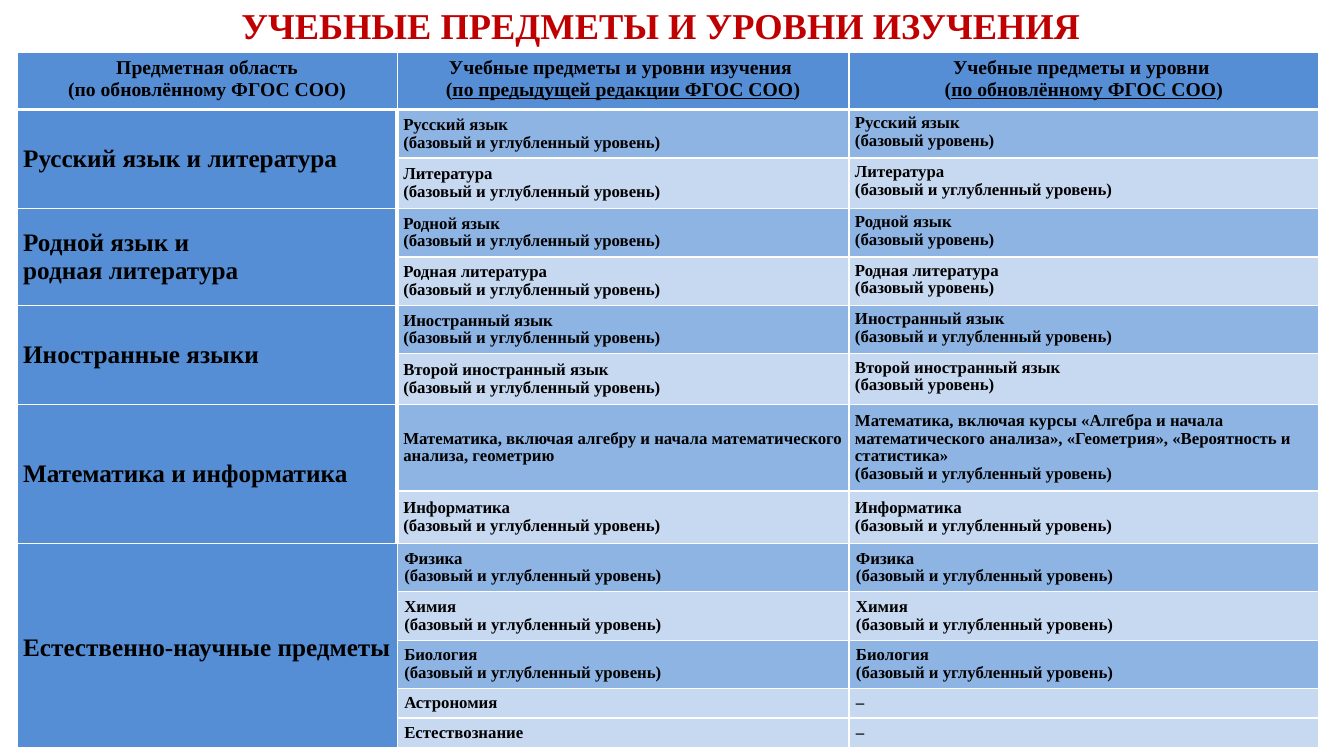
"""Build a slide with a table of school subjects and their study levels."""
from dataclasses import dataclass

from lxml import etree
from pptx import Presentation
from pptx import util as u
from pptx.dml import color
from pptx.enum import text
from pptx.oxml import ns

FONT = "Times New Roman"
BLACK, WHITE, RED = "000000", "FFFFFF", "C00000"
STRONG, MEDIUM, LIGHT = "558ED5", "8EB4E3", "C6D9F1"
THIN, THICK = 1, 3
TOP, MIDDLE = text.MSO_ANCHOR.TOP, text.MSO_ANCHOR.MIDDLE
LEFT, CENTER = text.PP_ALIGN.LEFT, text.PP_ALIGN.CENTER

BASIC = "\n(базовый уровень)"
BOTH = "\n(базовый и углубленный уровень)"
ABSENT = "–"


@dataclass
class Subject:
    previous: str
    updated: str
    height: float = 0.45


@dataclass
class Area:
    name: str
    subjects: list[Subject]
    updated_anchor: text.MSO_ANCHOR = MIDDLE
    inset: float = 0.06
    divider: float = THICK
    spacing: float = 1.0


@dataclass
class CellLook:
    fill: str
    size: float
    anchor: text.MSO_ANCHOR = MIDDLE
    align: text.PP_ALIGN = LEFT
    spacing: float = 0.95
    inset: float = 0.06
    left: float = THIN
    right: float = THIN
    top: float = THIN
    bottom: float = THIN


def same_level(name: str, height: float = 0.45) -> Subject:
    return Subject(name + BOTH, name + BOTH, height)


def lowered_level(name: str, height: float = 0.45) -> Subject:
    return Subject(name + BOTH, name + BASIC, height)


HEADER_HEIGHT = 0.54
COLUMN_WIDTHS = [3.77, 4.48, 4.66]
HEADINGS = [
    ("Предметная область", "по обновлённому ФГОС СОО", False),
    ("Учебные предметы и уровни изучения ", "по предыдущей редакции ФГОС СОО", True),
    ("Учебные предметы и уровни ", "по обновлённому ФГОС СОО", True),
]
AREAS = [
    Area("Русский язык и литература",
         [lowered_level("Русский язык"), same_level("Литература", 0.5)], TOP),
    Area("Родной язык и\nродная литература",
         [lowered_level("Родной язык"), lowered_level("Родная литература")], TOP),
    Area("Иностранные языки",
         [same_level("Иностранный язык"),
          lowered_level("Второй иностранный язык", 0.5)], TOP),
    Area("Математика и информатика",
         [Subject("Математика, включая алгебру и начала математического анализа, геометрию",
                  "Математика, включая курсы «Алгебра и начала математического анализа», "
                  "«Геометрия», «Вероятность и статистика»" + BOTH, 0.8),
          same_level("Информатика", 0.52)]),
    Area("Естественно-научные предметы",
         [same_level("Физика"), same_level("Химия"), same_level("Биология"),
          Subject("Астрономия", ABSENT, 0.28), Subject("Естествознание", ABSENT, 0.28)],
         inset=0.07, divider=THIN, spacing=1.15),
]


def rgb(value: str) -> color.RGBColor:
    return color.RGBColor.from_string(value)


def format_text(frame, size: float, ink: str, align: text.PP_ALIGN, spacing: float) -> None:
    for paragraph in frame.paragraphs:
        paragraph.alignment = align
        paragraph.line_spacing = spacing
        for run in paragraph.runs:
            run.font.name = FONT
            run.font.size = u.Pt(size)
            run.font.bold = True
            run.font.color.rgb = rgb(ink)


def add_border(cell, side: str, width: float) -> None:
    line = etree.SubElement(cell._tc.get_or_add_tcPr(), ns.qn("a:ln" + side),
                            w=str(u.Pt(width)))
    fill = etree.SubElement(line, ns.qn("a:solidFill"))
    etree.SubElement(fill, ns.qn("a:srgbClr"), val=WHITE)


def style_cell(cell, look: CellLook) -> None:
    for side, width in zip("LRTB", (look.left, look.right, look.top, look.bottom)):
        add_border(cell, side, width)
    cell.fill.solid()
    cell.fill.fore_color.rgb = rgb(look.fill)
    cell.margin_left = cell.margin_right = u.Inches(look.inset)
    cell.margin_top = cell.margin_bottom = u.Inches(0.05)
    cell.vertical_anchor = look.anchor
    format_text(cell.text_frame, look.size, BLACK, look.align, look.spacing)


def fill_header(table) -> None:
    for column, (heading, edition, underlined) in enumerate(HEADINGS):
        cell = table.cell(0, column)
        cell.text_frame.text = heading
        note = cell.text_frame.add_paragraph()
        for part in ("(", edition, ")"):
            run = note.add_run()
            run.text = part
            run.font.underline = underlined and part == edition
        style_cell(cell, CellLook(STRONG, 14, TOP, CENTER, spacing=1.0, bottom=THICK))


def fill_area(table, area: Area, first: int) -> None:
    last = first + len(area.subjects) - 1
    table.cell(first, 0).text_frame.text = area.name
    for offset, subject in enumerate(area.subjects):
        row = first + offset
        top = THICK if row == 1 else THIN
        fill = MEDIUM if offset % 2 == 0 and subject.updated != ABSENT else LIGHT
        previous, updated = table.cell(row, 1), table.cell(row, 2)
        previous.text_frame.text = subject.previous
        updated.text_frame.text = subject.updated
        style_cell(table.cell(row, 0), CellLook(STRONG, 18, spacing=area.spacing,
                                                right=area.divider, top=top))
        style_cell(previous, CellLook(fill, 12, inset=area.inset, left=area.divider, top=top))
        style_cell(updated, CellLook(fill, 12, area.updated_anchor, inset=area.inset, top=top))
    table.cell(first, 0).merge(table.cell(last, 0))


def add_title(slide) -> None:
    title = slide.shapes.add_textbox(u.Inches(0.05), u.Inches(-0.11),
                                     u.Inches(13.02), u.Inches(0.71))
    frame = title.text_frame
    frame.word_wrap = True
    frame.vertical_anchor = MIDDLE
    frame.text = "УЧЕБНЫЕ ПРЕДМЕТЫ И УРОВНИ ИЗУЧЕНИЯ"
    format_text(frame, 26, RED, CENTER, 1.0)


def add_subjects(slide) -> None:
    heights = [HEADER_HEIGHT] + [s.height for area in AREAS for s in area.subjects]
    table = slide.shapes.add_table(
        len(heights), len(COLUMN_WIDTHS), u.Inches(0.17), u.Inches(0.52),
        u.Inches(sum(COLUMN_WIDTHS)), u.Inches(sum(heights))).table
    for column, width in zip(table.columns, COLUMN_WIDTHS):
        column.width = u.Inches(width)
    for row, height in zip(table.rows, heights):
        row.height = u.Inches(height)
    fill_header(table)
    first = 1
    for area in AREAS:
        fill_area(table, area, first)
        first += len(area.subjects)


def main() -> None:
    deck = Presentation()
    deck.slide_width, deck.slide_height = u.Inches(13.33), u.Inches(7.5)
    slide = deck.slides.add_slide(deck.slide_layouts[6])
    add_title(slide)
    add_subjects(slide)
    deck.save("out.pptx")


if __name__ == "__main__":
    main()
